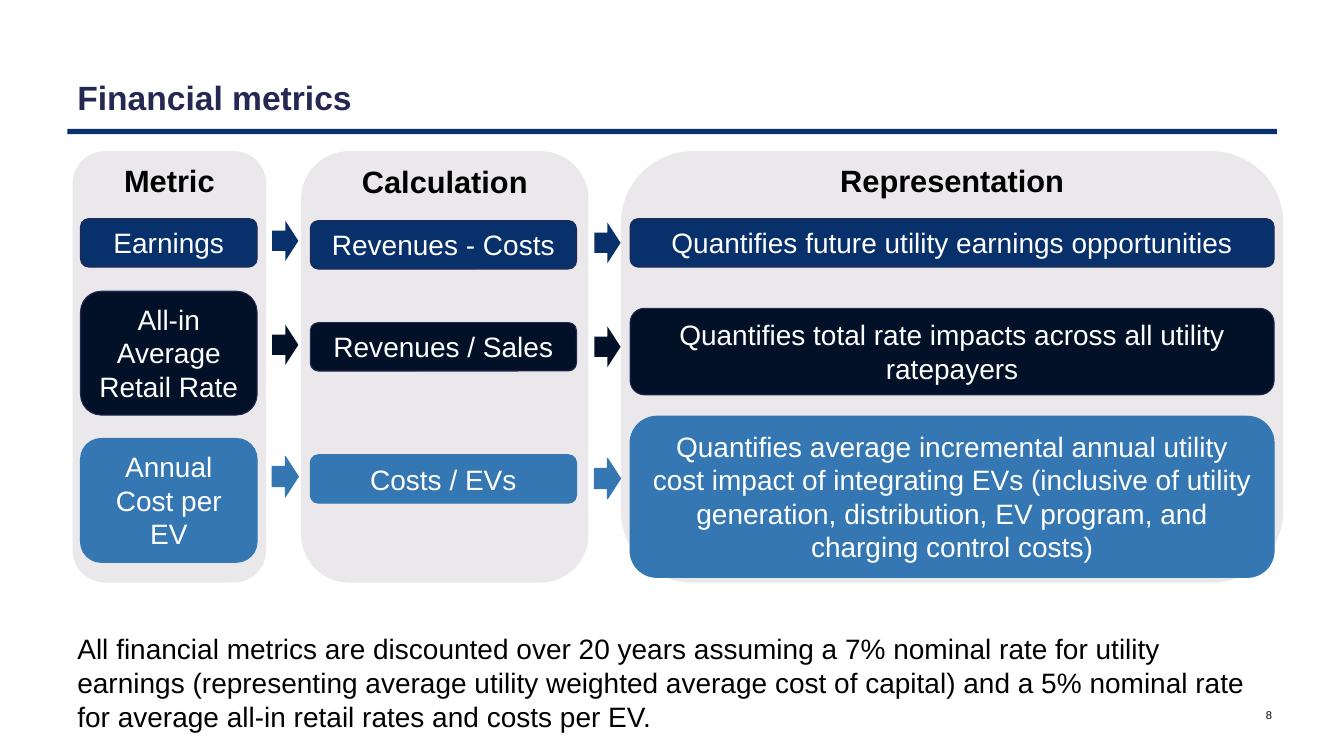
from dataclasses import dataclass
from typing import Optional

from pptx import Presentation
from pptx import util as u
from pptx.dml.color import RGBColor
from pptx.enum import shapes, text


@dataclass(frozen=True)
class Theme:
    font: str = "Arial"
    navy: str = "08306A"
    midnight: str = "021127"
    blue: str = "3477B2"
    indigo: str = "242852"
    panel: str = "EAE8EB"
    white: str = "FFFFFF"
    black: str = "000000"
    title_size: int = 24
    heading_size: int = 22
    body_size: int = 20
    number_size: int = 8


@dataclass(frozen=True)
class Area:
    """A rectangle in centimetres."""
    left: float
    top: float
    width: float
    height: float

    def lengths(self) -> tuple:
        return tuple(u.Cm(side) for side in (self.left, self.top, self.width, self.height))


@dataclass(frozen=True)
class Style:
    size: int
    color: str
    bold: bool = False
    align: text.PP_ALIGN = text.PP_ALIGN.LEFT
    anchor: text.MSO_ANCHOR = text.MSO_ANCHOR.TOP
    grow: bool = True


@dataclass(frozen=True)
class Column:
    heading: str
    heading_top: float
    panel_left: float
    panel_width: float
    box_left: float
    box_width: float


@dataclass(frozen=True)
class Box:
    words: str
    top: float
    height: float = 1.22


@dataclass(frozen=True)
class MetricRow:
    fill: str
    line: str
    arrow_top: float
    arrow_line: Optional[str]
    boxes: tuple[Box, ...]


THEME = Theme()
CENTER = text.PP_ALIGN.CENTER
TITLE = Style(THEME.title_size, THEME.indigo, bold=True, anchor=text.MSO_ANCHOR.BOTTOM)
HEADING = Style(THEME.heading_size, THEME.black, bold=True, align=CENTER)
BOX_TEXT = Style(THEME.body_size, THEME.white, align=CENTER)
NOTE = Style(THEME.body_size, THEME.black, grow=False)
PAGE_NUMBER = Style(THEME.number_size, THEME.black, align=text.PP_ALIGN.RIGHT,
                    anchor=text.MSO_ANCHOR.MIDDLE, grow=False)

PANEL_TOP, PANEL_HEIGHT = 3.81, 10.87
HEADING_HEIGHT = 1.19
ARROW_LEFTS = (6.86, 14.98)
ARROW_WIDTH, ARROW_HEIGHT, ARROW_STEP = 0.66, 1.02, 0.05

COLUMNS = (
    Column("Metric", 3.94, 1.83, 4.88, 2.03, 4.45),
    Column("Calculation", 3.97, 7.59, 7.24, 7.82, 6.71),
    Column("Representation", 3.94, 15.65, 16.69, 15.88, 16.23),
)
ROWS = (
    MetricRow(THEME.navy, THEME.indigo, 5.56, None, (
        Box("Earnings", 5.51),
        Box("Revenues - Costs", 5.56),
        Box("Quantifies future utility earnings opportunities", 5.51),
    )),
    MetricRow(THEME.midnight, THEME.indigo, 8.18, None, (
        Box("All-in Average Retail Rate", 7.34, 3.12),
        Box("Revenues / Sales", 8.13),
        Box("Quantifies total rate impacts across all utility ratepayers", 7.77, 2.18),
    )),
    MetricRow(THEME.blue, THEME.blue, 11.5, THEME.blue, (
        Box("Annual Cost per EV", 11.05, 3.12),
        Box("Costs / EVs", 11.46),
        Box("Quantifies average incremental annual utility cost impact of integrating EVs "
            "(inclusive of utility generation, distribution, EV program, and charging "
            "control costs)", 10.49, 4.06),
    )),
)


def write(shape, words: str, style: Style) -> None:
    frame = shape.text_frame
    frame.text = words
    frame.word_wrap = True
    frame.vertical_anchor = style.anchor
    frame.auto_size = (text.MSO_AUTO_SIZE.SHAPE_TO_FIT_TEXT if style.grow
                       else text.MSO_AUTO_SIZE.NONE)
    paragraph = frame.paragraphs[0]
    paragraph.alignment = style.align
    font = paragraph.runs[0].font
    font.name = THEME.font
    font.size = u.Pt(style.size)
    font.bold = style.bold
    font.color.rgb = RGBColor.from_string(style.color)


def add_text(slide, area: Area, words: str, style: Style) -> None:
    write(slide.shapes.add_textbox(*area.lengths()), words, style)


def add_filled(slide, kind: shapes.MSO_SHAPE, area: Area, fill: str,
               line: Optional[str] = None):
    shape = slide.shapes.add_shape(kind, *area.lengths())
    shape.shadow.inherit = False
    shape.fill.solid()
    shape.fill.fore_color.rgb = RGBColor.from_string(fill)
    if line is None:
        shape.line.fill.background()
    else:
        shape.line.color.rgb = RGBColor.from_string(line)
        shape.line.width = u.Pt(0.75)
    return shape


def add_column(slide, column: Column) -> None:
    panel = Area(column.panel_left, PANEL_TOP, column.panel_width, PANEL_HEIGHT)
    add_filled(slide, shapes.MSO_SHAPE.ROUNDED_RECTANGLE, panel, THEME.panel)
    heading = Area(column.panel_left, column.heading_top, column.panel_width, HEADING_HEIGHT)
    add_text(slide, heading, column.heading, HEADING)


def add_row(slide, row: MetricRow) -> None:
    for column, box in zip(COLUMNS, row.boxes):
        area = Area(column.box_left, box.top, column.box_width, box.height)
        shape = add_filled(slide, shapes.MSO_SHAPE.ROUNDED_RECTANGLE, area, row.fill, row.line)
        write(shape, box.words, BOX_TEXT)
    for index, left in enumerate(ARROW_LEFTS):
        area = Area(left, row.arrow_top + index * ARROW_STEP, ARROW_WIDTH, ARROW_HEIGHT)
        add_filled(slide, shapes.MSO_SHAPE.RIGHT_ARROW, area, row.fill, row.arrow_line)


def main() -> None:
    presentation = Presentation()
    presentation.slide_width = u.Cm(33.87)
    presentation.slide_height = u.Cm(19.05)
    slide = presentation.slides.add_slide(presentation.slide_layouts[6])

    add_filled(slide, shapes.MSO_SHAPE.RECTANGLE, Area(1.7, 3.25, 30.48, 0.13), THEME.navy)
    add_text(slide, Area(1.7, 1.8, 30.48, 1.27), "Financial metrics", TITLE)
    for column in COLUMNS:
        add_column(slide, column)
    for row in ROWS:
        add_row(slide, row)
    add_text(slide, Area(1.7, 15.8, 30.48, 3.25),
             "All financial metrics are discounted over 20 years assuming a 7% nominal rate "
             "for utility earnings (representing average utility weighted average cost of "
             "capital) and a 5% nominal rate for average all-in retail rates and costs per EV.",
             NOTE)
    add_text(slide, Area(31.04, 17.5, 1.27, 1.02), "8", PAGE_NUMBER)
    presentation.save("out.pptx")


if __name__ == "__main__":
    main()
